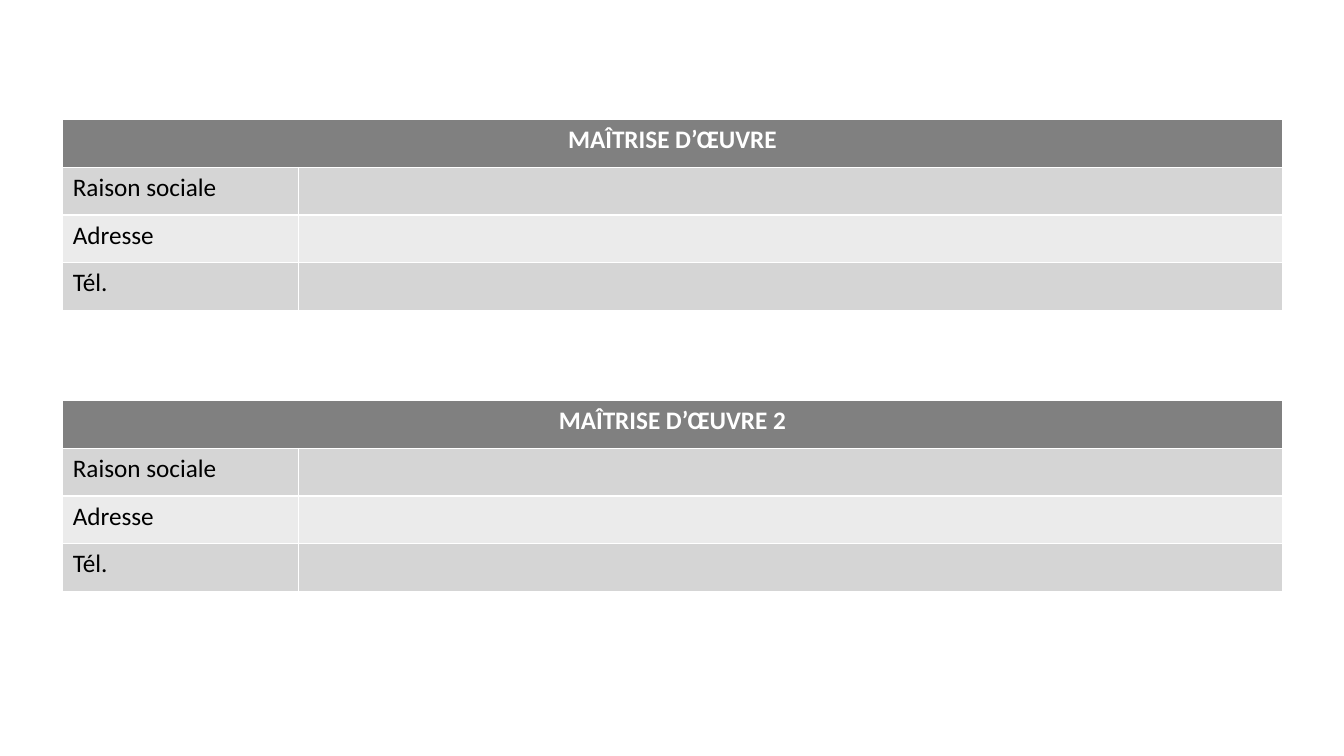
from pptx import Presentation
from pptx.dml.color import RGBColor
from pptx.enum.text import PP_ALIGN
from pptx.util import Cm, Pt


def paint(cell, shade):
    cell.fill.solid()
    cell.fill.fore_color.rgb = RGBColor.from_string(shade)


def write(cell, text, ink, bold):
    para = cell.text_frame.paragraphs[0]
    run = para.add_run()
    run.text = text
    style = {"name": "Calibri", "size": Pt(18), "bold": bold}
    for key, value in style.items():
        setattr(run.font, key, value)
    run.font.color.rgb = RGBColor.from_string(ink)
    return para


deck = Presentation()
deck.slide_width, deck.slide_height = Cm(33.87), Cm(19.05)
slide = deck.slides.add_slide(deck.slide_layouts[6])

labels = ["Raison sociale", "Adresse", "Tél."]
shades = ["D5D5D5", "EBEBEB"]
widths = [5.94, 24.79]
height = 1.2
titles = [("MAÎTRISE D’ŒUVRE", 3.02), ("MAÎTRISE D’ŒUVRE 2", 10.1)]

for title, top in titles:
    count = len(labels) + 1
    table = slide.shapes.add_table(
        count, 2, Cm(1.58), Cm(top), Cm(sum(widths)), Cm(count * height)
    ).table
    for column, width in zip(table.columns, widths):
        column.width = Cm(width)
    for row in table.rows:
        row.height = Cm(height)

    head = table.cell(0, 0)
    head.merge(table.cell(0, 1))
    paint(head, "808080")
    write(head, title, "FFFFFF", True).alignment = PP_ALIGN.CENTER

    for index, label in enumerate(labels):
        for cell in table.rows[index + 1].cells:
            paint(cell, shades[index % 2])
        write(table.cell(index + 1, 0), label, "000000", False)

deck.save("out.pptx")
